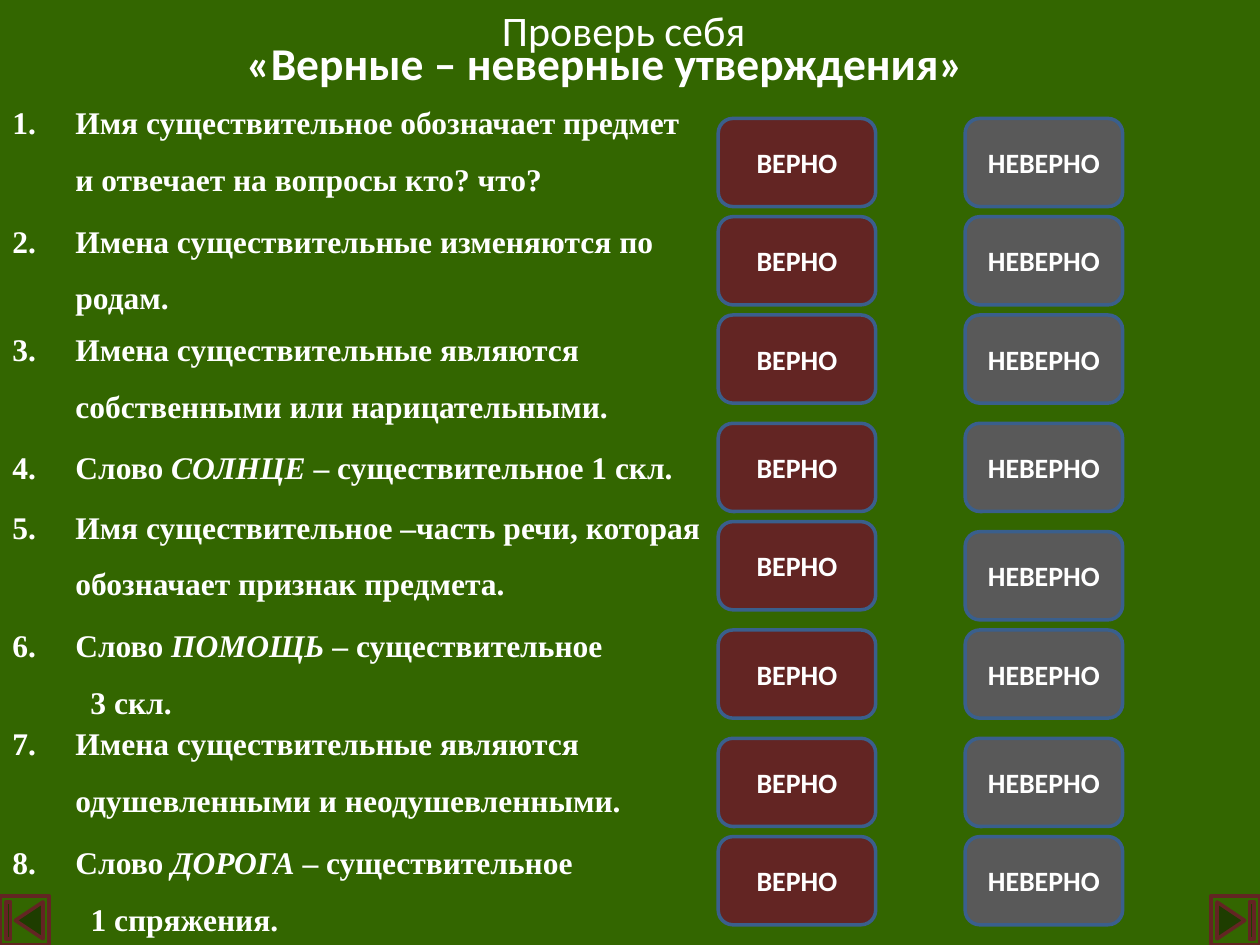
from lxml.etree import SubElement
from pptx import Presentation
from pptx.dml.color import RGBColor
from pptx.enum.shapes import MSO_SHAPE
from pptx.enum.text import MSO_ANCHOR, MSO_AUTO_SIZE, PP_ALIGN
from pptx.oxml.ns import qn
from pptx.util import Inches, Pt

GREEN = RGBColor(0x33, 0x66, 0x00)
MAROON = RGBColor(0x63, 0x25, 0x23)
GRAY = RGBColor(0x59, 0x59, 0x59)
BLUE = RGBColor(0x3A, 0x5F, 0x8C)
WHITE = RGBColor(0xFF, 0xFF, 0xFF)

ROW_TOPS = [0.94, 1.72, 2.5, 3.36, 4.14, 5, 5.86, 6.64]
FALSE_TOPS = [4.22 if top == 4.14 else top for top in ROW_TOPS]

STATEMENTS = [
    (0.62, 5.63, 1.01, ["Имя существительное обозначает предмет и отвечает на вопросы кто? что?"], ""),
    (1.56, 5.62, 1.01, ["Имена существительные изменяются по родам."], ""),
    (2.42, 5.39, 1.01, ["Имена существительные являются собственными или нарицательными."], ""),
    (3.36, 5.78, 0.56, ["Слово ", "СОЛНЦЕ", " – существительное 1 скл."], ""),
    (3.83, 5.7, 1.01, ["Имя существительное –часть речи, которая обозначает признак предмета."], ""),
    (4.77, 5.63, 1.01, ["Слово ", "ПОМОЩЬ", " – существительное"], "3 скл."),
    (5.55, 5.39, 1.01, ["Имена существительные являются одушевленными и неодушевленными."], ""),
    (6.49, 5.39, 1.01, ["Слово ", "ДОРОГА", " – существительное"], "1 спряжения."),
]


def add_text(p, text, size=18, font="Calibri", bold=True, italic=False, align=None):
    if align is not None:
        p.alignment = align
    r = p.add_run()
    r.text = text
    r.font.size = Pt(size)
    r.font.name = font
    r.font.bold = bold
    r.font.italic = italic
    r.font.color.rgb = WHITE


class SlideBuilder:
    serif = "Times New Roman"
    line_width = Pt(2)

    def __init__(self, s):
        self.s = s
        s.background.fill.solid()
        s.background.fill.fore_color.rgb = GREEN

    def heading(self, sp, box, text, anchor, **fmt):
        sp.left, sp.top, sp.width, sp.height = map(Inches, box)
        tf = sp.text_frame
        tf.auto_size = MSO_AUTO_SIZE.NONE
        tf.vertical_anchor = anchor
        p = tf.paragraphs[0]
        p.space_before = Pt(0)
        add_text(p, text, align=PP_ALIGN.CENTER, **fmt)

    def shape(self, kind, box, fill, line):
        sp = self.s.shapes.add_shape(kind, *map(Inches, box))
        sp.shadow.inherit = False
        sp.fill.solid()
        sp.fill.fore_color.rgb = fill
        sp.line.color.rgb = line
        sp.line.width = self.line_width
        return sp

    def answer(self, left, top, text, fill):
        sp = self.shape(MSO_SHAPE.ROUNDED_RECTANGLE, (left, top, 1.25, 0.7), fill, BLUE)
        tf = sp.text_frame
        tf.vertical_anchor = MSO_ANCHOR.MIDDLE
        add_text(tf.paragraphs[0], text, size=16, align=PP_ALIGN.CENTER)

    def navigation(self, left, rotation=0):
        box = (left, 7.11, 0.39, 0.39)
        sp = self.shape(MSO_SHAPE.ACTION_BUTTON_BEGINNING, box, GREEN, MAROON)
        sp.rotation = rotation

    def statement(self, number, top, width, height, parts, ending):
        sp = self.s.shapes.add_textbox(Inches(0), Inches(top), Inches(width), Inches(height))
        tf = sp.text_frame
        tf.word_wrap = True
        tf.auto_size = MSO_AUTO_SIZE.SHAPE_TO_FIT_TEXT
        p = tf.paragraphs[0]
        p.line_spacing = 1.5
        pPr = p._p.get_or_add_pPr()
        pPr.set("marL", str(Inches(0.5)))
        pPr.set("indent", str(Inches(-0.5)))
        SubElement(pPr, qn("a:buAutoNum"), type="arabicPeriod", startAt=str(number))
        for i, part in enumerate(parts):
            add_text(p, part, font=self.serif, italic=i == 1)
        if ending:
            p = tf.add_paragraph()
            p.line_spacing = 1.5
            p._p.get_or_add_pPr().set("marL", str(Inches(0.62)))
            add_text(p, ending, font=self.serif)


def main():
    prs = Presentation()
    prs.slide_width, prs.slide_height = Inches(10), Inches(7.5)
    s = prs.slides.add_slide(prs.slide_layouts[0])
    builder = SlideBuilder(s)
    builder.heading(s.shapes.title, (0.7, 0, 8.5, 0.47), "Проверь себя",
                    MSO_ANCHOR.MIDDLE, size=24, bold=False)
    builder.heading(s.placeholders[1], (0, 0.23, 9.61, 0.55),
                    "«Верные – неверные утверждения»", MSO_ANCHOR.TOP, size=26)
    for true_top, false_top in zip(ROW_TOPS, FALSE_TOPS):
        builder.answer(5.7, true_top, "ВЕРНО", MAROON)
        builder.answer(7.66, false_top, "НЕВЕРНО", GRAY)
    builder.navigation(0)
    builder.navigation(9.61, rotation=180)
    for number, statement in enumerate(STATEMENTS, 1):
        builder.statement(number, *statement)
    prs.save("out.pptx")


if __name__ == "__main__":
    main()
